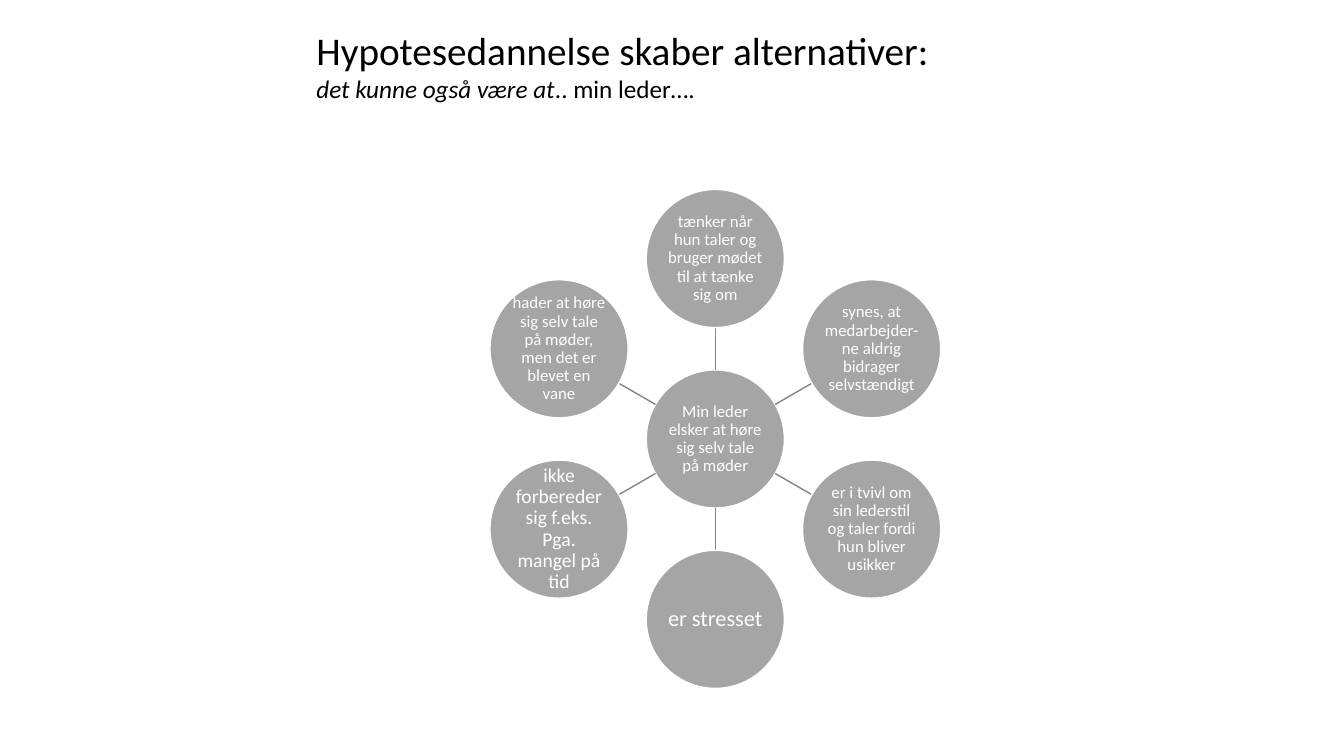
import math
from dataclasses import dataclass

import pptx
import pptx.dml.color
import pptx.enum.shapes
import pptx.enum.text
import pptx.oxml.ns
import pptx.util
from lxml import etree

Inches = pptx.util.Inches
Pt = pptx.util.Pt
RGBColor = pptx.dml.color.RGBColor


@dataclass(frozen=True)
class Theme:
    """Colours, font and type sizes of the slide."""
    font: str = "Calibri"
    ink: RGBColor = RGBColor(0, 0, 0)
    paper: RGBColor = RGBColor(255, 255, 255)
    circle: RGBColor = RGBColor(0xA5, 0xA5, 0xA5)
    spoke: RGBColor = RGBColor(0x84, 0x84, 0x84)
    title: int = 28
    subtitle: int = 18
    small: int = 12
    medium: int = 14
    large: int = 16


THEME = Theme()
BELIEF = "Min leder elsker at høre sig selv tale på møder"
HYPOTHESES = [
    ("tænker når hun taler og bruger mødet til at tænke sig om", THEME.small),
    ("synes, at medarbejder-ne aldrig bidrager selvstændigt", THEME.small),
    ("er i tvivl om sin lederstil og taler fordi hun bliver usikker", THEME.small),
    ("er stresset", THEME.large),
    ("ikke forbereder sig f.eks. Pga. mangel på tid", THEME.medium),
    ("hader at høre sig selv tale på møder, men det er blevet en vane", THEME.small),
]


def add_run(paragraph, text, size, color, italic=False):
    """Add one styled run to a paragraph."""
    run = paragraph.add_run()
    run.text = text
    run.font.name = THEME.font
    run.font.size = Pt(size)
    run.font.italic = italic
    run.font.color.rgb = color


def add_heading(slide, left, top, width, height):
    """Write the title and its subtitle in the given box."""
    heading = slide.shapes.add_textbox(
        Inches(left), Inches(top), Inches(width), Inches(height))
    heading.text_frame.word_wrap = True
    paragraph = heading.text_frame.paragraphs[0]
    add_run(paragraph, "Hypotesedannelse skaber alternativer:", THEME.title, THEME.ink)
    paragraph.add_line_break()
    add_run(paragraph, "det kunne også være at", THEME.subtitle, THEME.ink, italic=True)
    add_run(paragraph, ".. min leder….", THEME.subtitle, THEME.ink)


def add_circle(slide, center_x, center_y, diameter, text, size):
    """Draw one labelled circle around a centre point."""
    circle = slide.shapes.add_shape(
        pptx.enum.shapes.MSO_SHAPE.OVAL,
        Inches(center_x - diameter / 2), Inches(center_y - diameter / 2),
        Inches(diameter), Inches(diameter))
    circle.shadow.inherit = False
    circle.fill.solid()
    circle.fill.fore_color.rgb = THEME.circle
    circle.line.color.rgb = THEME.paper
    circle.line.width = Pt(1)
    frame = circle.text_frame
    frame.word_wrap = True
    frame.vertical_anchor = pptx.enum.text.MSO_ANCHOR.MIDDLE
    frame.margin_left = frame.margin_right = Inches(0.01)
    frame.margin_top = frame.margin_bottom = Inches(0.01)
    paragraph = frame.paragraphs[0]
    paragraph.alignment = pptx.enum.text.PP_ALIGN.CENTER
    paragraph.line_spacing = 0.9
    add_run(paragraph, text, size, THEME.paper)


def add_spoke(slide, start, end):
    """Draw a thin line between two points."""
    spoke = slide.shapes.add_connector(
        pptx.enum.shapes.MSO_CONNECTOR.STRAIGHT,
        *(Inches(value) for value in (*start, *end)))
    spoke.line.color.rgb = THEME.spoke
    spoke.line.width = Pt(1)
    etree.SubElement(spoke.element.spPr, pptx.oxml.ns.qn("a:effectLst"))


def add_hypothesis_wheel(slide, left, top, width, height, diameter=1.37):
    """Place the belief in the box's centre with the hypotheses around it."""
    center_x, center_y = left + width / 2, top + height / 2
    orbit = (height - diameter) / 2

    def point(angle, distance):
        """Return the point at a clockwise angle from the top."""
        return (center_x + distance * math.sin(angle),
                center_y - distance * math.cos(angle))

    add_circle(slide, center_x, center_y, diameter, BELIEF, THEME.small)
    for index, (text, size) in enumerate(HYPOTHESES):
        angle = math.tau * index / len(HYPOTHESES)
        add_spoke(slide, point(angle, diameter / 2), point(angle, orbit - diameter / 2))
        add_circle(slide, *point(angle, orbit), diameter, text, size)


def main():
    """Build and save the presentation."""
    presentation = pptx.Presentation()
    presentation.slide_width = Inches(13.33)
    presentation.slide_height = Inches(7.5)
    slide = presentation.slides.add_slide(presentation.slide_layouts[6])
    add_hypothesis_wheel(slide, 4.86, 1.88, 4.47, 4.95)
    add_heading(slide, 3.04, 0.21, 6.93, 0.88)
    presentation.save("out.pptx")


if __name__ == "__main__":
    main()
